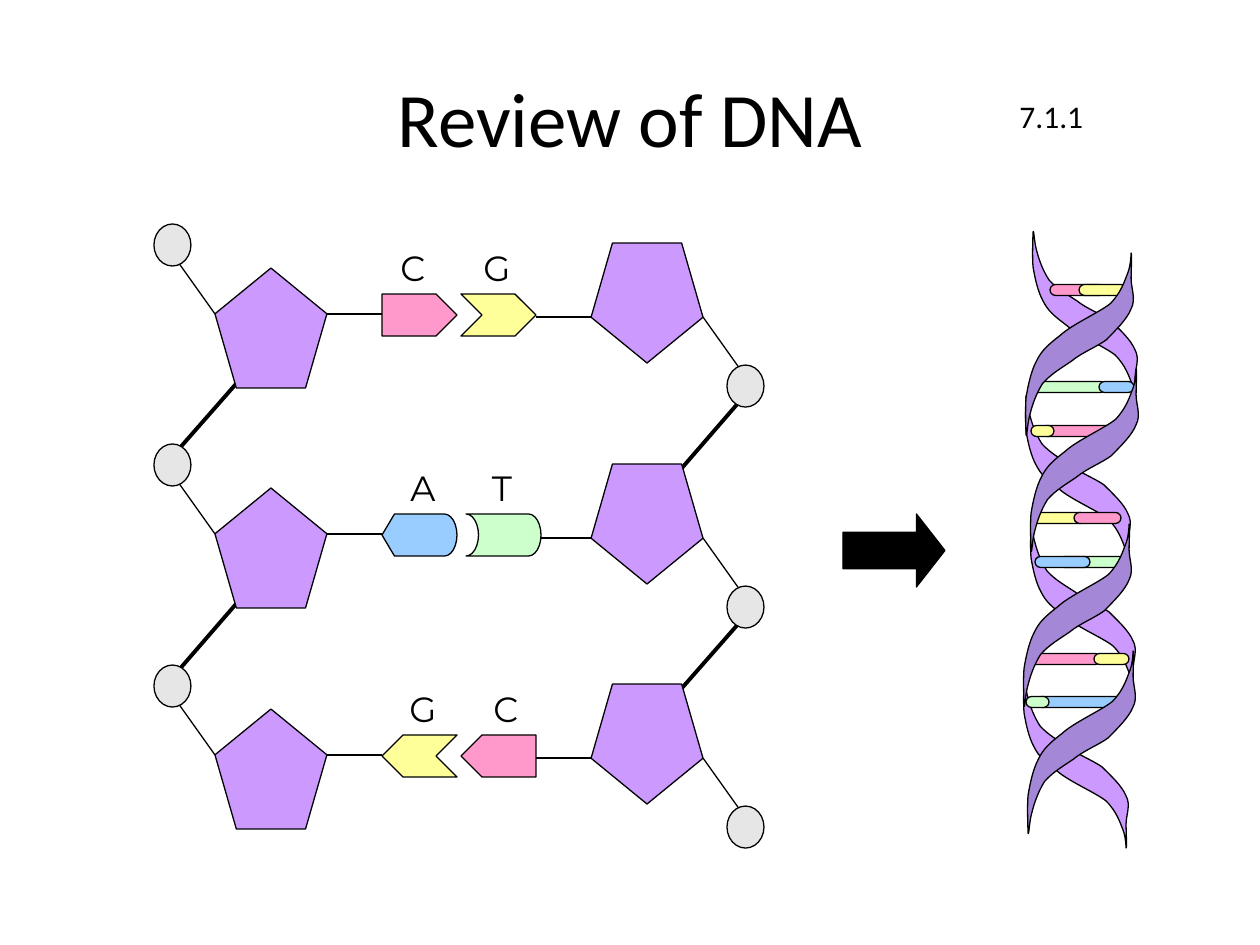
from lxml import etree
from pptx import Presentation
from pptx import util as u
from pptx.dml.color import RGBColor
from pptx.enum import shapes, text
from pptx.oxml import ns

PX = u.Inches(1) / 126
BLACK = RGBColor(0x00, 0x00, 0x00)
PURPLE = RGBColor(0xCC, 0x99, 0xFF)
DARK_PURPLE = RGBColor(0xA4, 0x87, 0xD6)
GRAY = RGBColor(0xE6, 0xE6, 0xE6)
PINK = RGBColor(0xFF, 0x99, 0xCC)
YELLOW = RGBColor(0xFF, 0xFF, 0x99)
BLUE = RGBColor(0x99, 0xCC, 0xFF)
GREEN = RGBColor(0xCC, 0xFF, 0xCC)
FORM = shapes.MSO_SHAPE

ROW_TOPS = (0, 220, 441)
LADDER = (154, 224, 610, 624)
HELIX = (1024, 232, 115, 617)

# Base pairs: letter, label x, outline, outline x, turned, colour
BASE_PAIRS = (
    (("C", 223, FORM.PENTAGON, 228, False, PINK),
     ("G", 307, FORM.CHEVRON, 307, False, YELLOW)),
    (("A", 233, FORM.FLOWCHART_DISPLAY, 228, False, BLUE),
     ("T", 312, FORM.FLOWCHART_STORED_DATA, 312, True, GREEN)),
    (("G", 233, FORM.CHEVRON, 228, True, YELLOW),
     ("C", 316, FORM.PENTAGON, 307, True, PINK)),
)

# One ribbon: cubic segments (control, control, end) starting at 0, 0
RIBBON = (
    ((0, 3), (-1, 24), (0, 35)), ((2, 47), (5, 60), (10, 69)),
    ((15, 79), (21, 84), (33, 93)), ((44, 103), (72, 115), (82, 123)),
    ((93, 134), (96, 145), (99, 152)), ((102, 160), (102, 171), (102, 170)),
    ((103, 170), (102, 155), (102, 146)), ((102, 137), (107, 127), (102, 118)),
    ((98, 108), (87, 98), (78, 89)), ((68, 82), (54, 77), (44, 69)),
    ((35, 63), (24, 57), (16, 48)), ((10, 39), (6, 28), (4, 20)),
    ((1, 11), (1, -3), (0, 0)),
)
RIBBON_CENTRE = (53, 84)
BACK_STARTS = ((2, 164), (0, 446), (9, 0), (7, 291))
FRONT_STARTS = ((7, 319), (0, 474), (4, 601), (2, 203))

# Helix rungs: left, middle, width, colour
RUNGS = (
    (8, 155, 74, GREEN), (17, 199, 74, PINK),
    (75, 155, 35, BLUE), (7, 199, 23, YELLOW),
    (35, 330, 66, GREEN), (7, 286, 55, YELLOW),
    (50, 286, 47, PINK), (11, 330, 55, BLUE),
    (3, 427, 74, PINK), (12, 470, 88, BLUE),
    (70, 427, 35, YELLOW), (2, 470, 23, GREEN),
    (26, 58, 55, PINK), (55, 58, 47, YELLOW),
)


def px(*lengths):
    return [u.Emu(round(length * PX)) for length in lengths]


def paint(shape, colour):
    shape.shadow.inherit = False
    shape.fill.solid()
    shape.fill.fore_color.rgb = colour
    shape.line.color.rgb = BLACK
    shape.line.width = u.Pt(0.75)


def add_part(slide, form, box, colour, rotation=0):
    part = slide.shapes.add_shape(form, *px(*box))
    paint(part, colour)
    part.rotation = rotation
    return part


def add_bond(slide, start, end, width=0.75):
    bond = slide.shapes.add_connector(
        shapes.MSO_CONNECTOR.STRAIGHT, *px(*start, *end))
    bond.line.color.rgb = BLACK
    bond.line.width = u.Pt(width)
    etree.SubElement(bond._element.spPr, ns.qn("a:effectLst"))


def style_text(frame, words, font_name, size, align):
    frame.word_wrap = True
    frame.text = words
    paragraph = frame.paragraphs[0]
    paragraph.alignment = align
    paragraph.font.name = font_name
    paragraph.font.size = u.Pt(size)
    paragraph.font.color.rgb = BLACK


def add_label(slide, box, words, font_name, size, align):
    label = slide.shapes.add_textbox(*px(*box))
    style_text(label.text_frame, words, font_name, size, align)


def add_header(slide, box):
    left, top, width, height = box
    title = slide.shapes.title
    title.left, title.top, title.width, title.height = px(*box)
    title.text_frame.vertical_anchor = text.MSO_ANCHOR.MIDDLE
    style_text(title.text_frame, "Review of DNA", "Calibri", 44,
               text.PP_ALIGN.CENTER)
    add_label(slide, (left + 944, top + 53, 110, 50), "7.1.1", "Calibri", 18,
              text.PP_ALIGN.LEFT)


def add_strand(slide, box, turned):
    """Sugar-phosphate strand; the turned one is rotated about the box centre."""
    left, top, width, height = box

    def at(x, y):
        if turned:
            x, y = width - x, height - y
        return left + x, top + y

    def place(form, x, y, w, h, colour):
        corner = at(x + w, y + h) if turned else at(x, y)
        add_part(slide, form, (*corner, w, h), colour, 180 if turned else 0)

    # Heavy bonds between rows lie behind the sugars
    for row, following in zip(ROW_TOPS, ROW_TOPS[1:]):
        add_bond(slide, at(24, following + 6), at(89, row + 152), 2.25)
    for row in ROW_TOPS:
        place(FORM.REGULAR_PENTAGON, 61, row + 44, 112, 120, PURPLE)
        add_bond(slide, at(61, row + 90), at(24, row + 38))
        add_bond(slide, at(173, row + 90), at(228, row + 90))
        place(FORM.OVAL, 0, row, 37, 42, GRAY)


def add_ladder(slide, box):
    left, top, width, height = box
    for turned in (False, True):
        add_strand(slide, box, turned)
    for row, pair in zip(ROW_TOPS, BASE_PAIRS):
        for letter, label_x, form, x, turned, colour in pair:
            add_part(slide, form, (left + x, top + row + 70, 75, 42), colour,
                     180 if turned else 0)
            add_label(slide, (left + label_x, top + row + 16, 72, 69), letter,
                      "Montserrat", 20, text.PP_ALIGN.CENTER)


def add_ribbon(slide, x, y, scale_x, scale_y, colour):
    """Ribbon laid out on its side, then turned upright about its centre."""
    centre_x = x + RIBBON_CENTRE[0] * scale_x
    centre_y = y + RIBBON_CENTRE[1] * scale_y

    def lay(dx, dy):
        return px(centre_x + (dy - RIBBON_CENTRE[1]) * scale_y,
                  centre_y - (dx - RIBBON_CENTRE[0]) * scale_x)

    builder = slide.shapes.build_freeform(*lay(0, 0))
    builder.add_line_segments([lay(*point) for curve in RIBBON for point in curve])
    ribbon = builder.convert_to_shape()
    # Join each three line steps into one cubic curve
    steps = list(ribbon._element.iter(ns.qn("a:lnTo")))
    for first, second, end in zip(steps[::3], steps[1::3], steps[2::3]):
        curve = etree.Element(ns.qn("a:cubicBezTo"))
        first.addprevious(curve)
        for step in (first, second, end):
            curve.append(step[0])
            step.getparent().remove(step)
    paint(ribbon, colour)
    ribbon.rotation = 90


def add_helix(slide, box):
    left, top, width, height = box
    for x, y in BACK_STARTS:
        add_ribbon(slide, left + x, top + y, 1, 1, PURPLE)
    for x, middle, length, colour in RUNGS:
        rung = add_part(
            slide, FORM.ROUNDED_RECTANGLE,
            (left + x + length / 2 - 5.5, top + middle - length / 2, 11, length),
            colour, 90)
        rung.adjustments[0] = 0.5
    # Front ribbons mirror the back ones and are slightly larger
    for x, y in FRONT_STARTS:
        add_ribbon(slide, left + x, top + y, 1.03, -1.07, DARK_PURPLE)


def main():
    prs = Presentation()
    prs.slide_width, prs.slide_height = px(1260, 945)
    slide = prs.slides.add_slide(prs.slide_layouts[5])
    add_header(slide, (63, 38, 1134, 158))
    add_ladder(slide, LADDER)
    add_helix(slide, HELIX)
    arrow = add_part(slide, FORM.RIGHT_ARROW, (843, 514, 102, 73), BLACK)
    arrow.adjustments[1] = 0.39
    prs.save("out.pptx")


if __name__ == "__main__":
    main()
